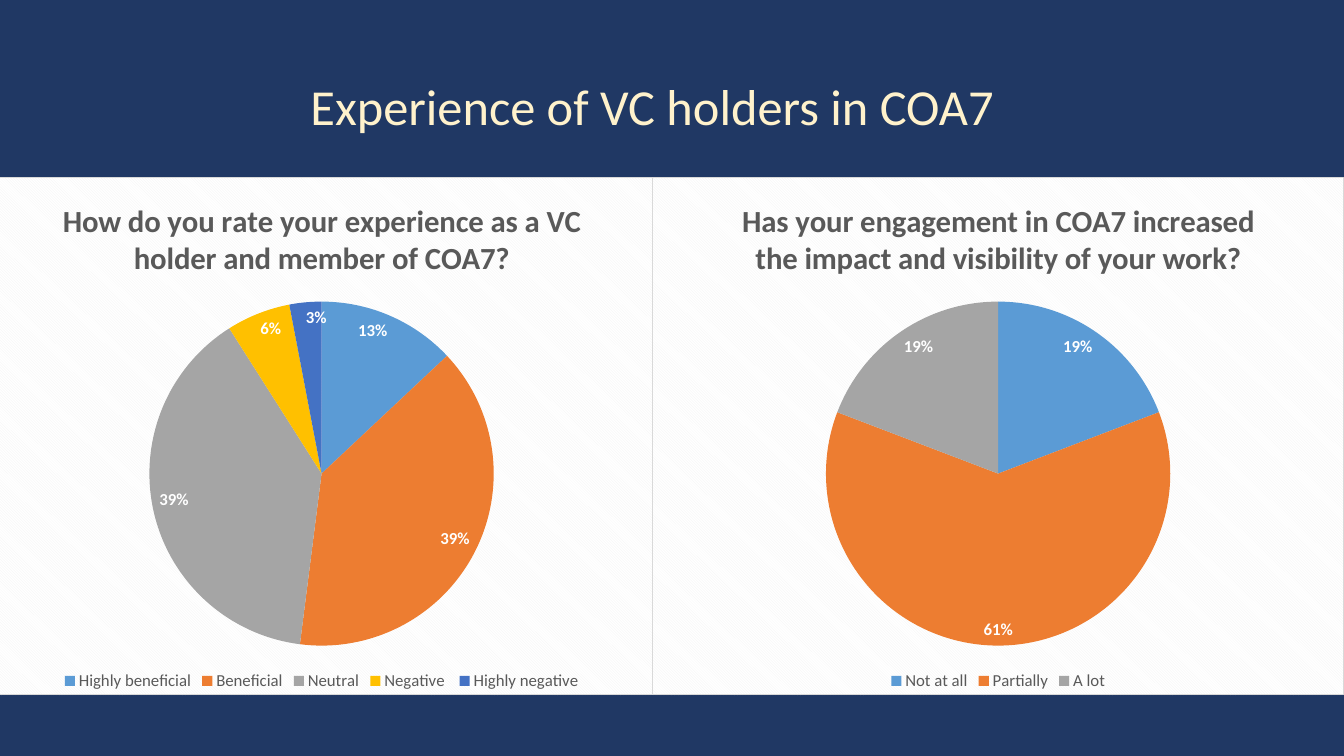
from lxml import etree
from pptx import Presentation
from pptx import util as u
from pptx.chart.data import CategoryChartData
from pptx.dml.color import RGBColor
from pptx.enum import chart as ch, text
from pptx.oxml import parse_xml
from pptx.oxml.ns import nsdecls, qn

TITLE = "Experience of VC holders in COA7"
PIES = [
    {
        "question": "How do you rate your experience as a VC holder and member of COA7?",
        "answers": {"Highly beneficial": 13, "Beneficial": 39, "Neutral": 39,
                    "Negative ": 6, "Highly negative": 3},
        "left": -0.39, "right": 6.77,
    },
    {
        "question": "Has your engagement in COA7 increased the impact and visibility of your work?",
        "answers": {"Not at all": 19, "Partially": 61, "A lot": 19},
        "left": 6.47, "right": 13.33,
    },
]
THEME = {
    "font": "Calibri",
    "back": "203864", "title": "FFF2CC", "ink": "595959", "label": "FFFFFF",
    "hatch": "F2F2F2", "paper": "FFFFFF", "border": "D9D9D9",
    "slices": ["5B9BD5", "ED7D31", "A5A5A5", "FFC000", "4472C4"],
    "title_size": 36, "question_size": 22, "small_size": 12,
}
WIDTH, HEIGHT = 13.33, 7.5
CHART_TOP, CHART_HEIGHT = 1.76, 5.14
PIE_TOP, PIE_SIZE = 1.23, 3.42


def style(font, size, color, bold=False):
    formats = {"name": THEME["font"], "size": u.Pt(size), "bold": bold}
    for name, value in formats.items():
        setattr(font, name, value)
    font.color.rgb = RGBColor.from_string(color)


def place(shape, *box):
    for name, value in zip(("left", "top", "width", "height"), box):
        setattr(shape, name, u.Inches(value))


def set_panel(chart):
    panel = parse_xml(
        f'<c:spPr {nsdecls("c", "a")}><a:pattFill prst="dkDnDiag">'
        f'<a:fgClr><a:srgbClr val="{THEME["hatch"]}"/></a:fgClr>'
        f'<a:bgClr><a:srgbClr val="{THEME["paper"]}"/></a:bgClr></a:pattFill>'
        f'<a:ln w="{u.Pt(0.75)}"><a:solidFill><a:srgbClr val="{THEME["border"]}"/>'
        '</a:solidFill></a:ln></c:spPr>')
    chart._chartSpace.find(qn("c:chart")).addnext(panel)


def set_plot_layout(chart, width):
    w, h = PIE_SIZE / width, PIE_SIZE / CHART_HEIGHT
    values = {"layoutTarget": "inner", "xMode": "edge", "yMode": "edge",
              "x": (1 - w) / 2, "y": PIE_TOP / CHART_HEIGHT, "w": w, "h": h}
    area = chart._chartSpace.find(qn("c:chart")).find(qn("c:plotArea"))
    for old in area.findall(qn("c:layout")):
        area.remove(old)
    layout = parse_xml(f'<c:layout {nsdecls("c")}><c:manualLayout/></c:layout>')
    for name, value in values.items():
        etree.SubElement(layout[0], qn(f"c:{name}")).set("val", str(value))
    area.insert(0, layout)


def add_pie(s, pie):
    data = CategoryChartData()
    data.categories = list(pie["answers"])
    data.add_series("Series 1", list(pie["answers"].values()))
    width = pie["right"] - pie["left"]
    box = [u.Inches(v) for v in (pie["left"], CHART_TOP, width, CHART_HEIGHT)]
    chart = s.shapes.add_chart(ch.XL_CHART_TYPE.PIE, *box, data).chart
    style(chart.font, THEME["small_size"], THEME["ink"])

    chart.has_title = True
    p = chart.chart_title.text_frame.paragraphs[0]
    r = p.add_run()
    r.text = pie["question"]
    style(r.font, THEME["question_size"], THEME["ink"], True)

    chart.has_legend = True
    chart.legend.position = ch.XL_LEGEND_POSITION.BOTTOM
    chart.legend.include_in_layout = False
    style(chart.legend.font, THEME["small_size"], THEME["ink"])

    plot = chart.plots[0]
    plot.vary_by_categories = True
    for i, color in enumerate(THEME["slices"][:len(pie["answers"])]):
        fill = plot.series[0].points[i].format.fill
        fill.solid()
        fill.fore_color.rgb = RGBColor.from_string(color)
    plot.has_data_labels = True
    formats = {"show_value": True, "show_percentage": False,
               "number_format": '0"%"', "number_format_is_linked": False,
               "position": ch.XL_LABEL_POSITION.INSIDE_END}
    for name, value in formats.items():
        setattr(plot.data_labels, name, value)
    style(plot.data_labels.font, THEME["small_size"], THEME["label"], True)
    set_plot_layout(chart, width)
    set_panel(chart)


def main():
    prs = Presentation()
    prs.slide_width, prs.slide_height = u.Inches(WIDTH), u.Inches(HEIGHT)
    s = prs.slides.add_slide(prs.slide_layouts[5])
    s.background.fill.solid()
    s.background.fill.fore_color.rgb = RGBColor.from_string(THEME["back"])

    for pie in PIES:
        add_pie(s, pie)

    title = s.shapes.title
    place(title, 2.29, 0.69, 8.36, 0.71)
    tf = title.text_frame
    tf.word_wrap = True
    tf.auto_size = text.MSO_AUTO_SIZE.NONE
    p = tf.paragraphs[0]
    p.alignment = text.PP_ALIGN.CENTER
    r = p.add_run()
    r.text = TITLE
    style(r.font, THEME["title_size"], THEME["title"])
    prs.save("out.pptx")


if __name__ == "__main__":
    main()
